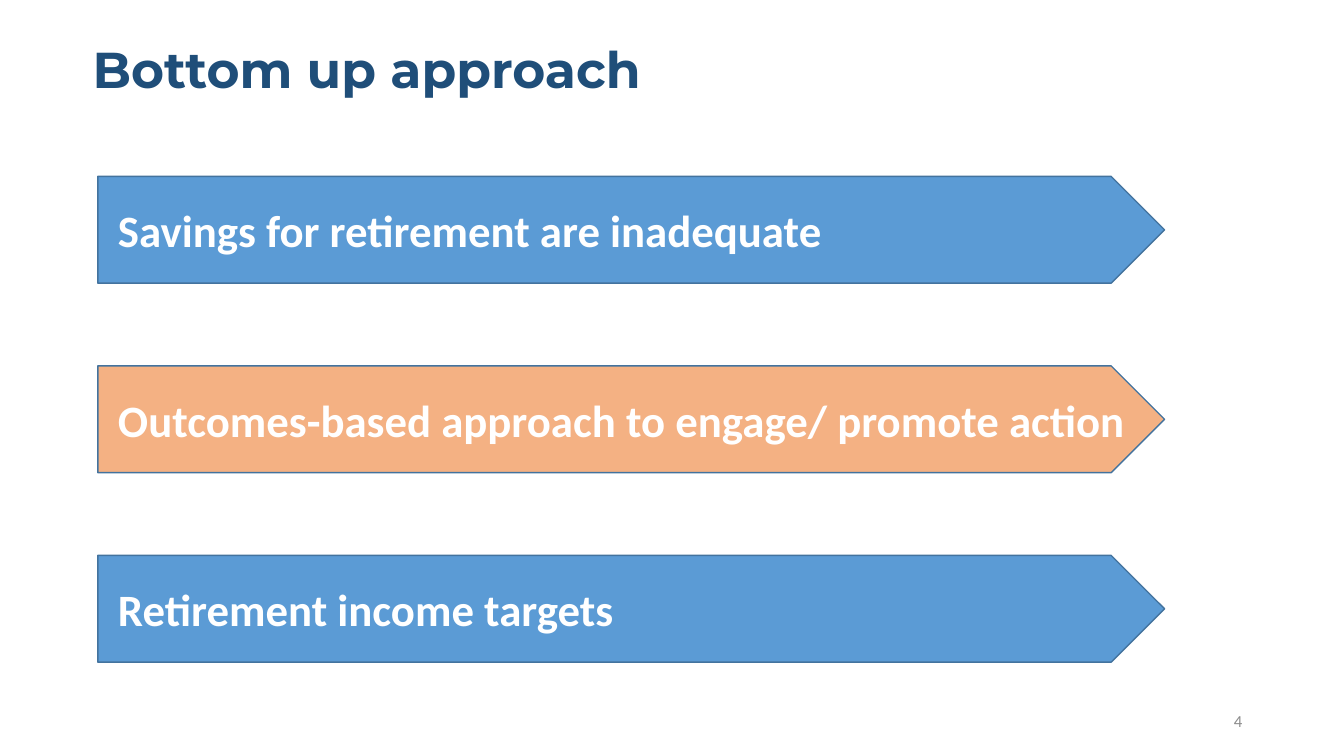
from pptx import Presentation
from pptx.dml.color import RGBColor
from pptx.enum import shapes, text
from pptx.util import Inches, Pt

BLUE = "5B9BD5"
PEACH = "F4B183"
EDGE = "43739E"
STEPS = [
    ("Savings for retirement are inadequate", BLUE),
    ("Outcomes-based approach to engage/ promote action", PEACH),
    ("Retirement income targets", BLUE),
]


def color(code):
    return RGBColor.from_string(code)


def write(shape, words, size, face, code, bold=False,
          align=text.PP_ALIGN.LEFT, anchor=text.MSO_ANCHOR.MIDDLE):
    frame = shape.text_frame
    frame.word_wrap = True
    frame.vertical_anchor = anchor
    frame.text = words
    line = frame.paragraphs[0]
    line.alignment = align
    font = line.runs[0].font
    font.size = Pt(size)
    font.name = face
    font.bold = bold
    font.color.rgb = color(code)
    return line


def add_box(slide, left, top, width, height):
    return slide.shapes.add_textbox(
        Inches(left), Inches(top), Inches(width), Inches(height))


def add_title(slide, words):
    box = add_box(slide, 0.82, 0.4, 11.6, 1.2)
    line = write(box, words, 36, "Montserrat", "1F4E79", True,
                 anchor=text.MSO_ANCHOR.TOP)
    line.line_spacing = 0.9


def add_number(slide, words):
    box = add_box(slide, 9.42, 6.95, 3, 0.4)
    write(box, words, 12, "Calibri", "8C8C8C", align=text.PP_ALIGN.RIGHT)


def add_step(slide, top, words, fill):
    arrow = slide.shapes.add_shape(
        shapes.MSO_SHAPE.PENTAGON,
        Inches(0.97), Inches(top), Inches(10.58), Inches(1.06))
    arrow.shadow.inherit = False
    arrow.fill.solid()
    arrow.fill.fore_color.rgb = color(fill)
    arrow.line.color.rgb = color(EDGE)
    arrow.line.width = Pt(1)
    arrow.text_frame.margin_left = Inches(0.2)
    arrow.text_frame.margin_right = 0
    write(arrow, words, 32, "Calibri", "FFFFFF", True)


def main():
    deck = Presentation()
    deck.slide_width = Inches(13.33)
    deck.slide_height = Inches(7.5)
    slide = deck.slides.add_slide(deck.slide_layouts[6])
    add_title(slide, "Bottom up approach")
    add_number(slide, "4")
    for index, (words, fill) in enumerate(STEPS):
        add_step(slide, 1.75 + 1.88 * index, words, fill)
    deck.save("out.pptx")


if __name__ == "__main__":
    main()
